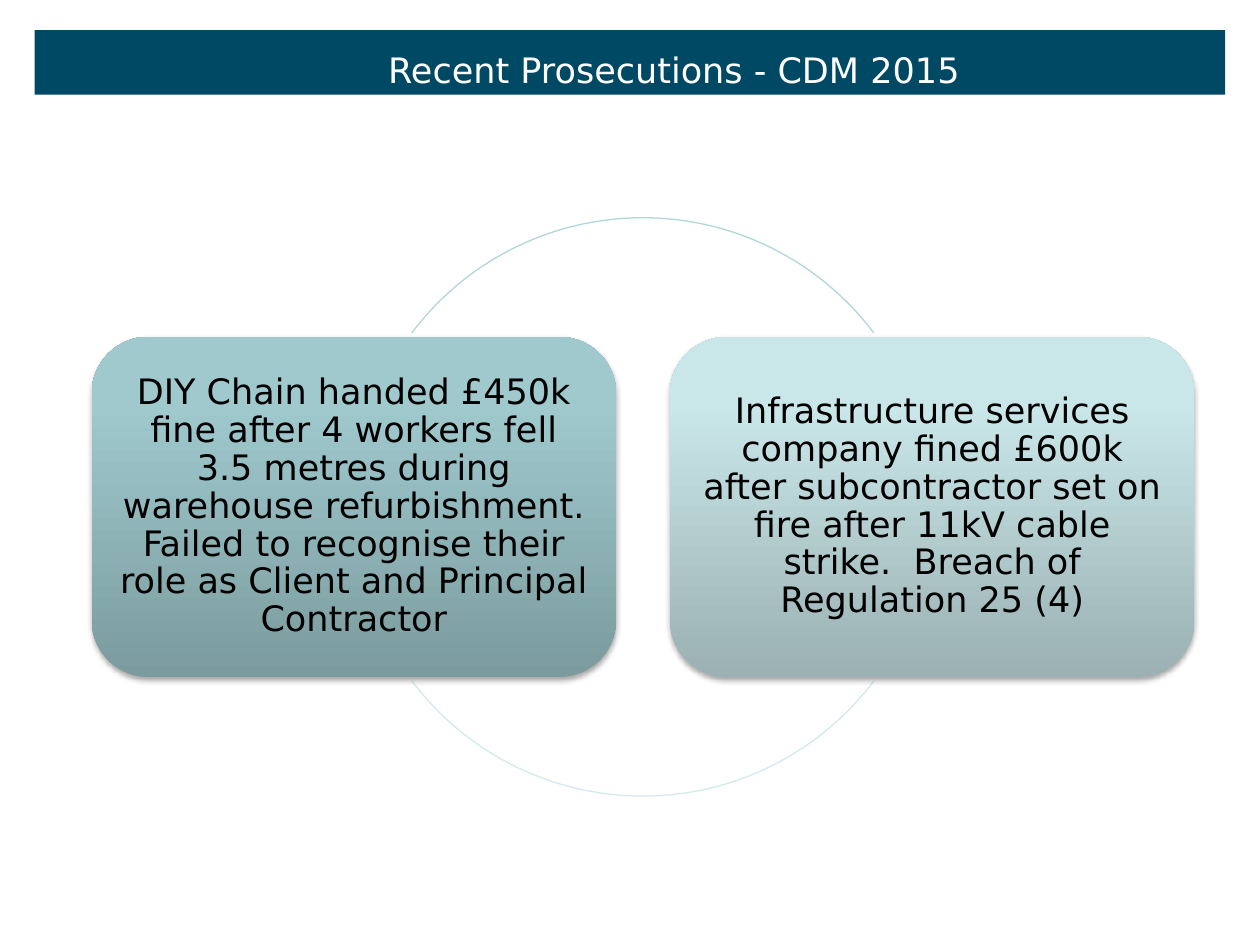
from copy import deepcopy

from lxml import etree
from pptx import Presentation
from pptx.dml.color import RGBColor
from pptx.enum.shapes import MSO_SHAPE as SHAPE
from pptx.enum.text import MSO_ANCHOR as ANCHOR, PP_ALIGN as ALIGN
from pptx.oxml.ns import qn
from pptx.util import Cm, Pt

WHITE = RGBColor(0xFF, 0xFF, 0xFF)
BLACK = RGBColor(0x00, 0x00, 0x00)
NAVY = RGBColor(0x00, 0x49, 0x64)
TEAL_LINE = RGBColor(0xB3, 0xD6, 0xD9)
PALE_LINE = RGBColor(0xD3, 0xEA, 0xEC)
TEAL = [RGBColor(0x7B, 0x9B, 0x9E), RGBColor(0x9F, 0xC9, 0xCD), RGBColor(0x9F, 0xCB, 0xCF)]
PALE = [RGBColor(0x9B, 0xB1, 0xB3), RGBColor(0xC9, 0xE6, 0xE8), RGBColor(0xC9, 0xE8, 0xEA)]


class Deck:
    """Holds the text style and the current slide."""
    font, size = "DejaVu Sans", Pt(20)

    def __init__(self, prs):
        self.s = prs.slides.add_slide(prs.slide_layouts[6])

    def shape(self, kind, x, y, w, h):
        sp = self.s.shapes.add_shape(kind, Cm(x), Cm(y), Cm(w), Cm(h))
        sp.shadow.inherit = False
        return sp

    def add_text(self, sp, text, color, anchor, spacing):
        tf = sp.text_frame
        tf.word_wrap = True
        tf.vertical_anchor = anchor
        p = tf.paragraphs[0]
        p.alignment = ALIGN.CENTER
        p.line_spacing = spacing
        r = p.add_run()
        r.text = text
        r.font.name, r.font.size = self.font, self.size
        r.font.color.rgb = color
        return tf

    def bar(self, x, y, w, h, color):
        sp = self.shape(SHAPE.RECTANGLE, x, y, w, h)
        sp.fill.solid()
        sp.fill.fore_color.rgb = color
        sp.line.fill.background()

    def title(self, x, y, w, h, text):
        box = self.s.shapes.add_textbox(Cm(x), Cm(y), Cm(w), Cm(h))
        self.add_text(box, text, WHITE, ANCHOR.BOTTOM, 0.75)

    def arc(self, cx, cy, radius, start, end, color):
        sp = self.shape(SHAPE.ARC, cx - radius, cy - radius, 2 * radius, 2 * radius)
        # Angles are stored in 60000ths of a degree, adjustments in 100000ths
        sp.adjustments[0], sp.adjustments[1] = start * 0.6, end * 0.6
        sp.fill.background()
        sp.line.color.rgb = color
        sp.line.width = Pt(0.75)

    def card(self, x, y, w, h, colors, text):
        sp = self.shape(SHAPE.ROUNDED_RECTANGLE, x, y, w, h)
        sp.line.fill.background()
        self.gradient(sp, colors)
        self.drop_shadow(sp)
        tf = self.add_text(sp, text, BLACK, ANCHOR.MIDDLE, 0.9)
        tf.margin_left = tf.margin_right = tf.margin_top = tf.margin_bottom = Cm(0.2)

    def gradient(self, sp, colors):
        sp.fill.gradient()
        sp.fill.gradient_angle = 90
        stops = next(sp._element.spPr.iter(qn("a:gsLst")))
        stops.append(deepcopy(stops[-1]))
        for stop, color, position in zip(sp.fill.gradient_stops, colors, (0, 0.8, 1)):
            stop.color.rgb = color
            stop.position = position

    def drop_shadow(self, sp):
        effects = sp._element.spPr.find(qn("a:effectLst"))
        shadow = etree.SubElement(effects, qn("a:outerShdw"), blurRad="40000",
                                  dist="23000", dir="5400000", rotWithShape="0")
        color = etree.SubElement(shadow, qn("a:srgbClr"), val=str(BLACK))
        etree.SubElement(color, qn("a:alpha"), val="35000")


def main():
    prs = Presentation()
    prs.slide_width, prs.slide_height = Cm(25.4), Cm(19.05)
    deck = Deck(prs)

    # Title bar
    deck.bar(0.7, 0.61, 24, 1.3, NAVY)
    deck.title(2.39, 0.38, 22.4, 1.55, "Recent Prosecutions - CDM 2015")

    # Ring behind the cards, open where they stand
    cx, cy, radius, gap = 12.96, 10.22, 5.83, 37
    deck.arc(cx, cy, radius, 180 + gap, 360 - gap, TEAL_LINE)
    deck.arc(cx, cy, radius, gap, 180 - gap, PALE_LINE)

    # Prosecution cards
    left, width, height, pitch = 1.85, 10.57, 6.86, 11.66
    cards = [
        (TEAL, "DIY Chain handed £450k fine after 4 workers fell 3.5 metres during "
               "warehouse refurbishment. Failed to recognise their role as Client "
               "and Principal Contractor"),
        (PALE, "Infrastructure services company fined £600k after subcontractor set "
               "on fire after 11kV cable strike.  Breach of Regulation 25 (4)"),
    ]
    for i, (colors, text) in enumerate(cards):
        deck.card(left + i * pitch, cy - height / 2, width, height, colors, text)

    prs.save("out.pptx")


if __name__ == "__main__":
    main()
